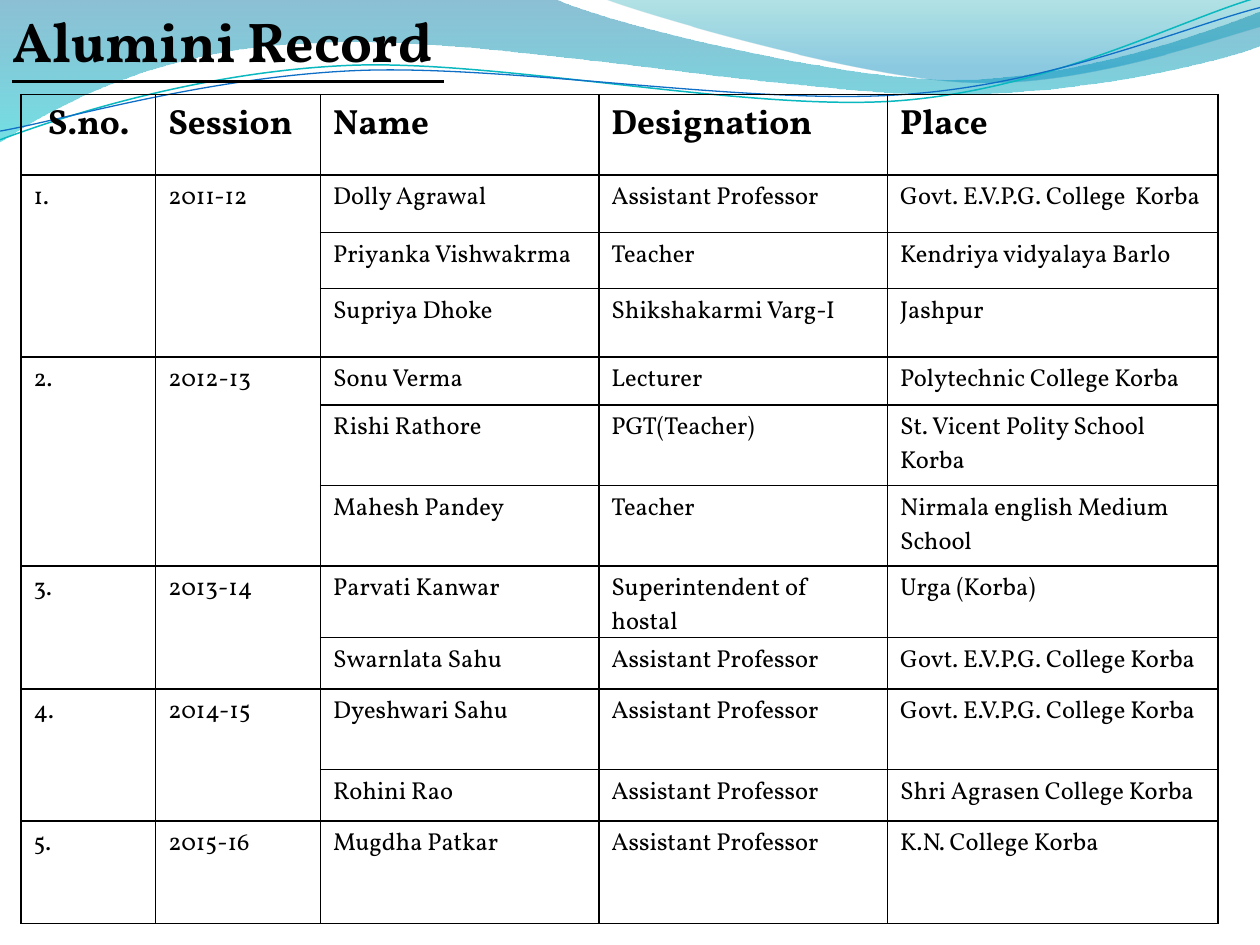
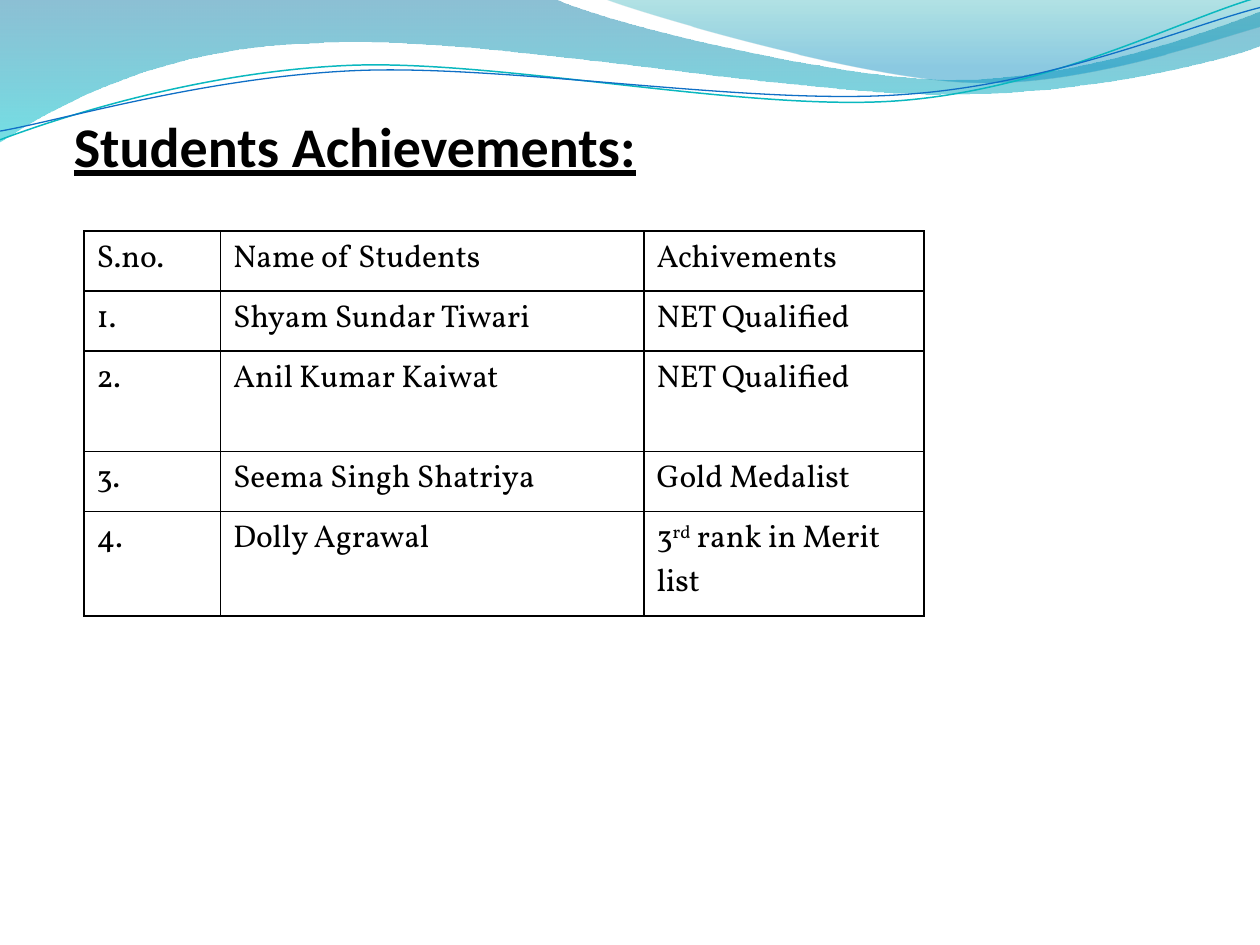
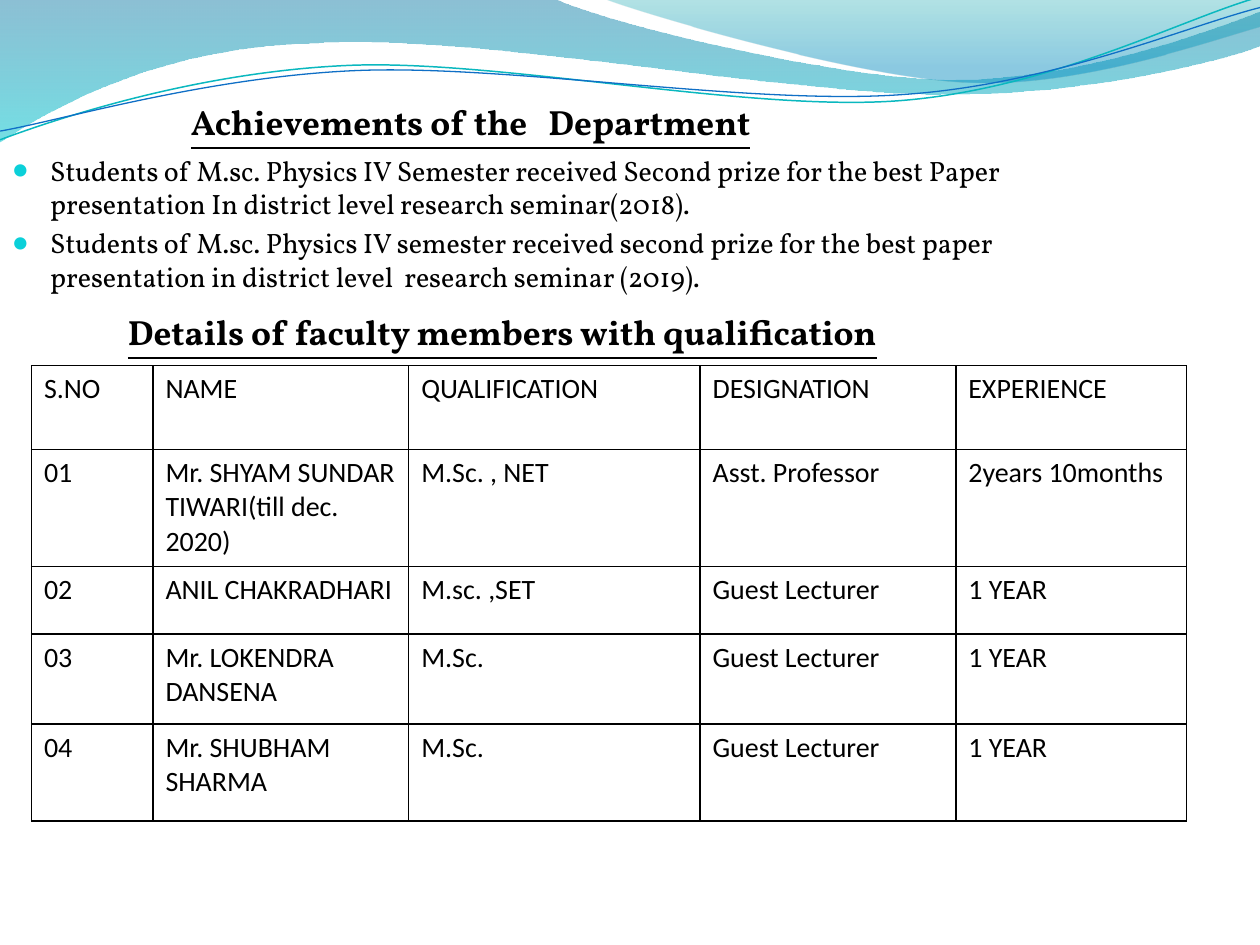
"""Build the three-slide deck of department records and achievements."""
from dataclasses import dataclass

from lxml import etree
from pptx import Presentation
from pptx import util as u
from pptx.dml.color import RGBColor
from pptx.enum import text
from pptx.oxml import ns

COLORS = {
    "text": "000000",
    "bullet": "0BD0D9",
    "band_top": "0074A1",
    "band_bottom": "00C6CF",
    "corner_top": "00A1A9",
    "corner_bottom": "008BBF",
    "line_teal": "0AB8BF",
    "line_blue": "0F6FC6",
}
SERIF, SANS = "Vollkorn", "Calibri"


@dataclass(frozen=True)
class Style:
    font: str
    size: float
    bold: bool = False
    underline: bool = False


@dataclass(frozen=True)
class Box:
    left: float
    top: float
    width: float
    height: float


@dataclass(frozen=True)
class Stop:
    color: str
    position: float
    opacity: int


@dataclass(frozen=True)
class Wave:
    """A start point followed by line ends (2 numbers) or cubic curves (6 numbers)."""
    start: tuple
    segments: tuple
    stops: tuple = ()
    line: str = ""
    line_width: float = 0


@dataclass(frozen=True)
class Grid:
    left: float
    top: float
    columns: tuple
    heights: tuple
    rows: tuple
    body: Style
    header: Style
    first_margin: float = 7.2


WAVES = (
    Wave((0, 0),
         ((316.8, -0.7),
          (342.7, 12.2, 478.1, 45.4, 545.8, 45.4),
          (614.2, 45.4, 689.8, 18.7, 720, 6.5),
          (720.7, 25.9),
          (707.8, 31.7, 626.4, 54.7, 537.1, 54),
          (447.8, 54, 275, 20.2, 185, 24.5),
          (92.9, 25.9, 33.1, 59.8, -0.7, 81.4)),
         stops=(Stop("band_top", 0, 45), Stop("band_bottom", 1, 55))),
    Wave((344.9, -0.7),
         ((366.5, 7.9, 491, 44.6, 553.7, 46.8),
          (616.3, 49.7, 691.9, 23, 720, 15.1),
          (720, 0)),
         stops=(Stop("corner_top", 0, 30), Stop("corner_bottom", 0.8, 45))),
    Wave((0, 79.9),
         ((34.6, 67, 113.8, 41, 199.4, 37.4),
          (284.4, 33.8, 427, 64.1, 513.4, 57.6),
          (599.8, 51.1, 675.4, 10.8, 718.6, -1.4)),
         line="line_teal", line_width=0.85),
    Wave((0, 74.9),
         ((33.8, 69.1, 118.1, 43.9, 203.8, 40.3),
          (290.2, 36.7, 429.8, 60.5, 516.2, 54),
          (601.9, 48.2, 677.5, 15.1, 720, 4.3)),
         line="line_blue", line_width=0.75),
)

HEADING = Style(SERIF, 20, bold=True, underline=True)

ALUMNI = Grid(
    12, 54, (77, 94.2, 159, 165, 188.8),
    (46, 33, 32, 39, 27.5, 46, 46, 29.5, 29.5, 46, 29.5, 58.5),
    (("S.no.", "Session", "Name", "Designation", "Place"),
     ("1.", "2011-12", "Dolly Agrawal", "Assistant Professor", "Govt. E.V.P.G. College  Korba"),
     ("", "", "Priyanka Vishwakrma", "Teacher", "Kendriya vidyalaya Barlo"),
     ("", "", "Supriya Dhoke", "Shikshakarmi Varg-I", "Jashpur"),
     ("2.", "2012-13", "Sonu Verma", "Lecturer", "Polytechnic College Korba"),
     ("", "", "Rishi Rathore", "PGT(Teacher)", "St. Vicent Polity School Korba"),
     ("", "", "Mahesh Pandey", "Teacher", "Nirmala english Medium School"),
     ("3.", "2013-14", "Parvati Kanwar", "Superintendent of hostal", "Urga (Korba)"),
     ("", "", "Swarnlata Sahu", "Assistant Professor", "Govt. E.V.P.G. College Korba"),
     ("4.", "2014-15", "Dyeshwari Sahu", "Assistant Professor", "Govt. E.V.P.G. College Korba"),
     ("", "", "Rohini Rao", "Assistant Professor", "Shri Agrasen College Korba"),
     ("5.", "2015-16", "Mugdha Patkar", "Assistant Professor", "K.N. College Korba")),
    Style(SERIF, 14), Style(SERIF, 20, bold=True), first_margin=15.4)

STUDENTS = Grid(
    48, 132, (78, 242, 160), (34.4, 34.3, 57.3, 34.4, 59.6),
    (("S.no.", "Name of Students", "Achivements"),
     ("1.", "Shyam Sundar Tiwari", "NET Qualified"),
     ("2.", "Anil Kumar Kaiwat", "NET Qualified"),
     ("3.", "Seema Singh Shatriya", "Gold Medalist"),
     ("4.", "Dolly Agrawal", "3^rd^ rank in Merit list")),
    Style(SERIF, 18), Style(SERIF, 18))

FACULTY = Grid(
    18, 209, (69.4, 146.16, 166.5, 146.16, 131.78), (48, 66.8, 38.6, 51.5, 55.3),
    (("S.NO", "NAME", "QUALIFICATION", "DESIGNATION", "EXPERIENCE"),
     ("01", "Mr. SHYAM SUNDAR TIWARI(till dec. 2020)", "M.Sc. , NET",
      "Asst. Professor", "2years 10months"),
     ("02", "ANIL CHAKRADHARI", "M.sc. ,SET", "Guest Lecturer", "1 YEAR"),
     ("03", "Mr. LOKENDRA DANSENA", "M.Sc.", "Guest Lecturer", "1 YEAR"),
     ("04", "Mr. SHUBHAM SHARMA", "M.Sc.", "Guest Lecturer", "1 YEAR")),
    Style(SANS, 16), Style(SANS, 16))

PRIZES = (
    "Students of M.sc. Physics IV Semester received Second prize for the best Paper "
    "presentation In district level research seminar(2018).",
    "Students of M.sc. Physics IV semester received second prize for the best paper "
    "presentation in district level  research seminar (2019).",
)


def rgb(name: str) -> RGBColor:
    """Return the named palette colour."""
    return RGBColor.from_string(COLORS[name])


def sub(parent, tag: str, **attributes: str):
    """Append a DrawingML child element."""
    return etree.SubElement(parent, ns.qn(tag), attributes)


def bend_segments(shape, wave: Wave) -> None:
    """Turn the straight segments of a freeform into the cubic curves of a wave."""
    lines = list(shape.element.spPr.iter(ns.qn("a:lnTo")))
    for line, segment in zip(lines, wave.segments):
        if len(segment) == 2:
            continue
        curve = etree.Element(ns.qn("a:cubicBezTo"))
        for x, y in zip(segment[::2], segment[1::2]):
            sub(curve, "a:pt", x=str(u.Pt(x) - shape.left), y=str(u.Pt(y) - shape.top))
        line.getparent().replace(line, curve)


def draw_wave(slide, wave: Wave) -> None:
    """Draw one filled wave or one wavy line."""
    builder = slide.shapes.build_freeform(*(u.Pt(value) for value in wave.start))
    ends = [(u.Pt(segment[-2]), u.Pt(segment[-1])) for segment in wave.segments]
    builder.add_line_segments(ends, close=bool(wave.stops))
    shape = builder.convert_to_shape()
    bend_segments(shape, wave)
    shape.shadow.inherit = False
    if not wave.stops:
        shape.fill.background()
        shape.line.color.rgb = rgb(wave.line)
        shape.line.width = u.Pt(wave.line_width)
        return
    shape.line.fill.background()
    shape.fill.gradient()
    shape.fill.gradient_angle = 270
    for gradient_stop, stop in zip(shape.fill.gradient_stops, wave.stops):
        gradient_stop.color.rgb = rgb(stop.color)
        gradient_stop.position = stop.position
    for color, stop in zip(shape.element.spPr.iter(ns.qn("a:srgbClr")), wave.stops):
        sub(color, "a:alpha", val=str(stop.opacity * 1000))


def write(paragraph, content: str, style: Style) -> None:
    """Write styled text; parts between carets are superscript."""
    parts = content.split("^")
    paragraph.text = parts[0]
    for part in parts[1:]:
        paragraph.add_run().text = part
    for index, run in enumerate(paragraph.runs):
        run.font.name = style.font
        run.font.size = u.Pt(style.size)
        run.font.bold = style.bold
        run.font.underline = style.underline
        run.font.color.rgb = rgb("text")
        if index % 2:
            run._r.get_or_add_rPr().set("baseline", "30000")


def add_text(slide, box: Box, contents: tuple, style: Style):
    """Add a wrapping text box with one paragraph per string."""
    shape = slide.shapes.add_textbox(
        u.Pt(box.left), u.Pt(box.top), u.Pt(box.width), u.Pt(box.height))
    frame = shape.text_frame
    frame.word_wrap = True
    for index, content in enumerate(contents):
        paragraph = frame.add_paragraph() if index else frame.paragraphs[0]
        write(paragraph, content, style)
    return frame


def add_bullets(frame) -> None:
    """Turn the paragraphs of a text frame into a bulleted list."""
    for paragraph in frame.paragraphs:
        paragraph.space_before = u.Pt(3.2)
        properties = paragraph._p.get_or_add_pPr()
        properties.set("marL", str(u.Pt(21.6)))
        properties.set("indent", str(-u.Pt(21.6)))
        sub(sub(properties, "a:buClr"), "a:srgbClr", val=COLORS["bullet"])
        sub(properties, "a:buSzPct", val="95000")
        sub(properties, "a:buFont", typeface=SANS)
        sub(properties, "a:buChar", char="●")


def add_borders(cell) -> None:
    """Give a cell a thin line on all sides."""
    properties = cell._tc.get_or_add_tcPr()
    for side in ("a:lnL", "a:lnR", "a:lnT", "a:lnB"):
        line = sub(properties, side, w=str(u.Pt(1)))
        sub(sub(line, "a:solidFill"), "a:srgbClr", val=COLORS["text"])


def add_grid(slide, grid: Grid) -> None:
    """Add a ruled table, merging empty cells into the cell above."""
    table = slide.shapes.add_table(
        len(grid.rows), len(grid.columns), u.Pt(grid.left), u.Pt(grid.top),
        u.Pt(sum(grid.columns)), u.Pt(sum(grid.heights))).table
    table.first_row = table.horz_banding = False
    for column, width in zip(table.columns, grid.columns):
        column.width = u.Pt(width)
    for row, height in zip(table.rows, grid.heights):
        row.height = u.Pt(height)
    for row_index, contents in enumerate(grid.rows):
        for column_index, content in enumerate(contents):
            cell = table.cell(row_index, column_index)
            write(cell.text_frame.paragraphs[0], content,
                  grid.body if row_index else grid.header)
            add_borders(cell)
            cell.fill.background()
    table.cell(0, 0).margin_left = u.Pt(grid.first_margin)
    for column_index in range(len(grid.columns)):
        filled = [index for index, row in enumerate(grid.rows) if row[column_index]]
        for first, following in zip(filled, filled[1:] + [len(grid.rows)]):
            if following - first > 1:
                table.cell(first, column_index).merge(
                    table.cell(following - 1, column_index))


def add_slide(presentation):
    """Add a blank slide with the wave header."""
    slide = presentation.slides.add_slide(presentation.slide_layouts[6])
    for wave in WAVES:
        draw_wave(slide, wave)
    return slide


def main() -> None:
    """Build and save the deck."""
    presentation = Presentation()
    presentation.slide_width, presentation.slide_height = u.Pt(720), u.Pt(540)

    slide = add_slide(presentation)
    add_text(slide, Box(0, 0, 360, 46), ("Alumini Record ",),
             Style(SERIF, 32, bold=True, underline=True))
    add_grid(slide, ALUMNI)

    slide = add_slide(presentation)
    title = add_text(slide, Box(42.2, 12, 648, 90), ("Students Achievements:",),
                     Style(SANS, 32, bold=True, underline=True))
    title.vertical_anchor = text.MSO_ANCHOR.BOTTOM
    title.margin_left = title.margin_right = title.margin_bottom = u.Pt(0)
    add_grid(slide, STUDENTS)

    slide = add_slide(presentation)
    add_bullets(add_text(slide, Box(0, 84, 648, 332.5), PRIZES, Style(SERIF, 16)))
    add_text(slide, Box(66, 174, 468, 32),
             ("Details of faculty members with qualification",), HEADING)
    add_grid(slide, FACULTY)
    add_text(slide, Box(102, 54, 402, 55.5),
             ("Achievements of the   Department",), HEADING)

    presentation.save("out.pptx")


if __name__ == "__main__":
    main()
